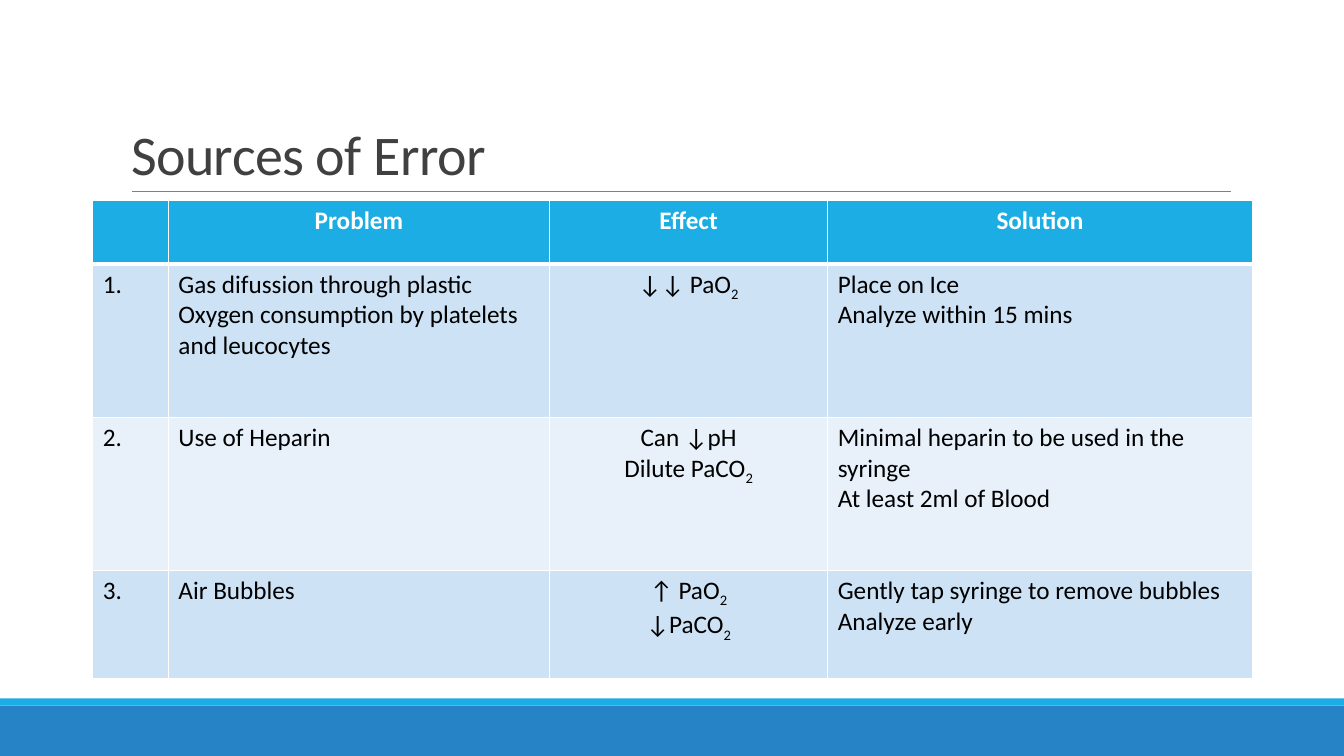
from lxml import etree
from pptx import Presentation
from pptx import util as u
from pptx.dml.color import RGBColor
from pptx.enum import shapes, text
from pptx.oxml import ns

HEADERS = ["", "Problem", "Effect", "Solution"]
ROWS = [
    ["1.", "Gas difussion through plastic\nOxygen consumption by platelets and leucocytes",
     "↓↓ PaO₂", "Place on Ice\nAnalyze within 15 mins"],
    ["2.", "Use of Heparin", "Can ↓pH\nDilute PaCO₂",
     "Minimal heparin to be used in the syringe\nAt least 2ml of Blood"],
    ["3.", "Air Bubbles", "↑ PaO₂\n↓PaCO₂",
     "Gently tap syringe to remove bubbles\nAnalyze early"],
]
COLUMN_WIDTHS = [0.75, 3.78, 2.76, 4.21]
ROW_HEIGHTS = [0.63, 1.52, 1.52, 1.07]
EFFECT_COLUMN = 2


def color(value):
    """Return the colour for a hex string."""
    return RGBColor.from_string(value)


def apply_format(target, values):
    """Set each attribute of the target from a dict."""
    for name, value in values.items():
        setattr(target, name, value)


def box_format(left, top, width, height):
    """Return position and size values in inches."""
    names = ("left", "top", "width", "height")
    return {name: u.Inches(value) for name, value in zip(names, (left, top, width, height))}


def add_run(paragraph, content, hex_color, **font_format):
    """Add a Calibri run with the given font values."""
    run = paragraph.add_run()
    run.text = content
    apply_format(run.font, {"name": "Calibri", **font_format})
    run.font.color.rgb = color(hex_color)
    return run


def add_band(slide, box, fill):
    """Add a plain filled band."""
    shape = slide.shapes.add_shape(shapes.MSO_SHAPE.RECTANGLE, **box_format(*box))
    shape.shadow.inherit = False
    shape.fill.solid()
    shape.fill.fore_color.rgb = color(fill)
    shape.line.fill.background()


def add_footer(slide, left, top, width, height):
    """Add the dark footer band with its light strip on top."""
    strip = 0.07
    add_band(slide, (left, top + strip, width, height - strip), "2683C6")
    add_band(slide, (left, top, width, strip), "1CADE4")


def add_title(slide, left, top, width, height):
    """Place the title and the rule below it."""
    title = slide.shapes.title
    apply_format(title, box_format(left, top, width, height))
    apply_format(title.text_frame, {
        "auto_size": text.MSO_AUTO_SIZE.NONE,
        "vertical_anchor": text.MSO_ANCHOR.BOTTOM,
        "word_wrap": True,
    })
    paragraph = title.text_frame.paragraphs[0]
    apply_format(paragraph, {"alignment": text.PP_ALIGN.LEFT, "line_spacing": 0.85})
    run = add_run(paragraph, "Sources of Error", "404040", size=u.Pt(40))
    run.font._element.set("spc", "-40")

    bottom = u.Inches(top + height)
    rule = slide.shapes.add_connector(
        shapes.MSO_CONNECTOR.STRAIGHT,
        u.Inches(left + 0.11), bottom, u.Inches(left + width + 0.01), bottom)
    rule.line.color.rgb = color("808080")
    rule.line.width = u.Pt(0.5)
    etree.SubElement(rule._element.spPr, ns.qn("a:effectLst"))


def set_borders(cell, top, bottom):
    """Draw white cell borders with the given top and bottom widths."""
    properties = cell._tc.get_or_add_tcPr()
    widths = {"lnL": 1, "lnR": 1, "lnT": top, "lnB": bottom}
    for index, (side, width) in enumerate(widths.items()):
        line = etree.Element(ns.qn(f"a:{side}"), w=str(u.Pt(width)))
        fill = etree.SubElement(line, ns.qn("a:solidFill"))
        etree.SubElement(fill, ns.qn("a:srgbClr"), val="FFFFFF")
        properties.insert(index, line)


def fill_cell(cell, content, hex_color, alignment, bold):
    """Write the lines of a cell, lowering each subscript two."""
    cell.text_frame.text = "\n" * content.count("\n")
    for paragraph, line in zip(cell.text_frame.paragraphs, content.split("\n")):
        apply_format(paragraph, {"alignment": alignment})
        base, subscript, _ = line.partition("₂")
        if base:
            add_run(paragraph, base, hex_color, size=u.Pt(18), bold=bold)
        if subscript:
            run = add_run(paragraph, "2", hex_color, size=u.Pt(18), bold=bold)
            run.font._element.set("baseline", "-25000")


def add_error_table(slide, left, top, width, height):
    """Add the table of problems, effects and solutions."""
    table = slide.shapes.add_table(
        len(ROW_HEIGHTS), len(COLUMN_WIDTHS), **box_format(left, top, width, height)).table
    for column, column_width in zip(table.columns, COLUMN_WIDTHS):
        column.width = u.Inches(column_width)
    for row, row_height in zip(table.rows, ROW_HEIGHTS):
        row.height = u.Inches(row_height)
    for row_index, row in enumerate([HEADERS, *ROWS]):
        header = row_index == 0
        fill = "1CADE4" if header else ("E8F1FA", "CDE3F5")[row_index % 2]
        for column_index, content in enumerate(row):
            cell = table.cell(row_index, column_index)
            centered = header or column_index == EFFECT_COLUMN
            fill_cell(cell, content, "FFFFFF" if header else "000000",
                      text.PP_ALIGN.CENTER if centered else text.PP_ALIGN.LEFT, header)
            cell.fill.solid()
            cell.fill.fore_color.rgb = color(fill)
            set_borders(cell, 3 if row_index == 1 else 1, 3 if header else 1)


def main():
    """Build and save the presentation."""
    presentation = Presentation()
    apply_format(presentation, {"slide_width": u.Inches(13.33), "slide_height": u.Inches(7.5)})
    slide = presentation.slides.add_slide(presentation.slide_layouts[5])
    add_footer(slide, 0, 6.93, 13.33, 0.57)
    add_title(slide, 1.2, 0.31, 11, 1.59)
    add_error_table(slide, 0.92, 1.99, 11.5, 4.74)
    presentation.save("out.pptx")


if __name__ == "__main__":
    main()
